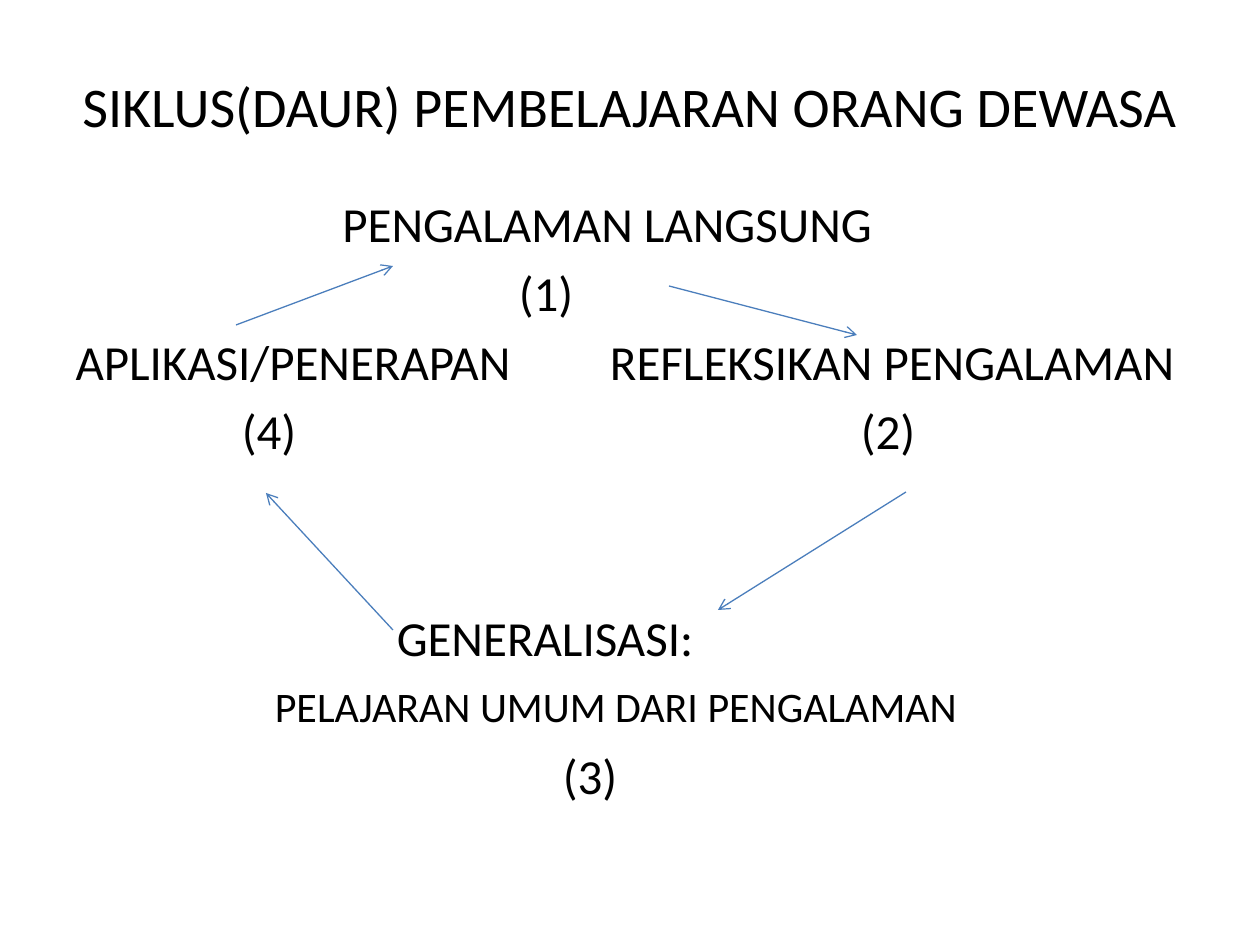
from dataclasses import dataclass

from lxml.etree import SubElement
from pptx import Presentation
from pptx.dml.color import RGBColor
from pptx.enum.shapes import MSO_CONNECTOR
from pptx.enum.text import MSO_ANCHOR, PP_ALIGN
from pptx.oxml.ns import qn
from pptx.util import Emu, Pt

SLIDE_WIDTH, SLIDE_HEIGHT = 1260, 945
FIRST_ROW, ROW_PITCH = 223, 69


@dataclass(frozen=True)
class Theme:
    font: str = "Calibri"
    ink: str = "000000"
    arrow: str = "4B7EBC"
    title_size: int = 32
    label_size: int = 28
    detail_size: int = 24
    arrow_width: float = 0.75


def px(length):
    """Convert pixels, 126 to the inch, to EMU."""
    return Emu(round(length * 914400 / 126))


def write(frame, text, *, font, size, color, align=PP_ALIGN.CENTER):
    paragraph = frame.paragraphs[0]
    paragraph.alignment = align
    run = paragraph.add_run()
    run.text = text
    run.font.name = font
    run.font.size = Pt(size)
    run.font.color.rgb = RGBColor.from_string(color)


class SlideBuilder:
    def __init__(self, slide, theme):
        self.slide = slide
        self.theme = theme

    def text(self, text, left, top, width, height, size):
        box = self.slide.shapes.add_textbox(px(left), px(top), px(width), px(height))
        frame = box.text_frame
        frame.word_wrap = True
        frame.vertical_anchor = MSO_ANCHOR.MIDDLE
        frame.margin_left = frame.margin_right = 0
        frame.margin_top = frame.margin_bottom = 0
        write(frame, text, font=self.theme.font, size=size, color=self.theme.ink)

    def label(self, text, row, center, width, size):
        """Centre one line of the cycle on its row."""
        middle = FIRST_ROW + row * ROW_PITCH
        self.text(text, center - width // 2, middle - 30, width, 60, size)

    def arrow(self, start, end):
        connector = self.slide.shapes.add_connector(
            MSO_CONNECTOR.STRAIGHT, *map(px, start + end))
        connector.line.color.rgb = RGBColor.from_string(self.theme.arrow)
        connector.line.width = Pt(self.theme.arrow_width)
        SubElement(connector.line._get_or_add_ln(), qn("a:tailEnd"), type="arrow")
        SubElement(connector._element.spPr, qn("a:effectLst"))


def main():
    theme = Theme()
    deck = Presentation()
    deck.slide_width, deck.slide_height = px(SLIDE_WIDTH), px(SLIDE_HEIGHT)
    builder = SlideBuilder(deck.slides.add_slide(deck.slide_layouts[6]), theme)

    builder.text("SIKLUS(DAUR) PEMBELAJARAN ORANG DEWASA",
                 63, 38, 1134, 134, theme.title_size)

    # Text, row, centre, width, type size
    stages = [
        ("PENGALAMAN LANGSUNG", 0, 607, 560, theme.label_size),
        ("(1)", 1, 546, 80, theme.label_size),
        ("APLIKASI/PENERAPAN", 2, 293, 460, theme.label_size),
        ("REFLEKSIKAN PENGALAMAN", 2, 892, 600, theme.label_size),
        ("(4)", 3, 269, 80, theme.label_size),
        ("(2)", 3, 888, 80, theme.label_size),
        ("GENERALISASI:", 6, 545, 330, theme.label_size),
        ("PELAJARAN UMUM DARI PENGALAMAN", 7, 616, 720, theme.detail_size),
        ("(3)", 8, 590, 80, theme.label_size),
    ]
    for stage in stages:
        builder.label(*stage)

    cycle_arrows = [
        ((236, 325), (393, 266)),
        ((393, 630), (266, 493)),
        ((669, 286), (857, 335)),
        ((906, 492), (718, 610)),
    ]
    for start, end in cycle_arrows:
        builder.arrow(start, end)

    deck.save("out.pptx")


if __name__ == "__main__":
    main()
